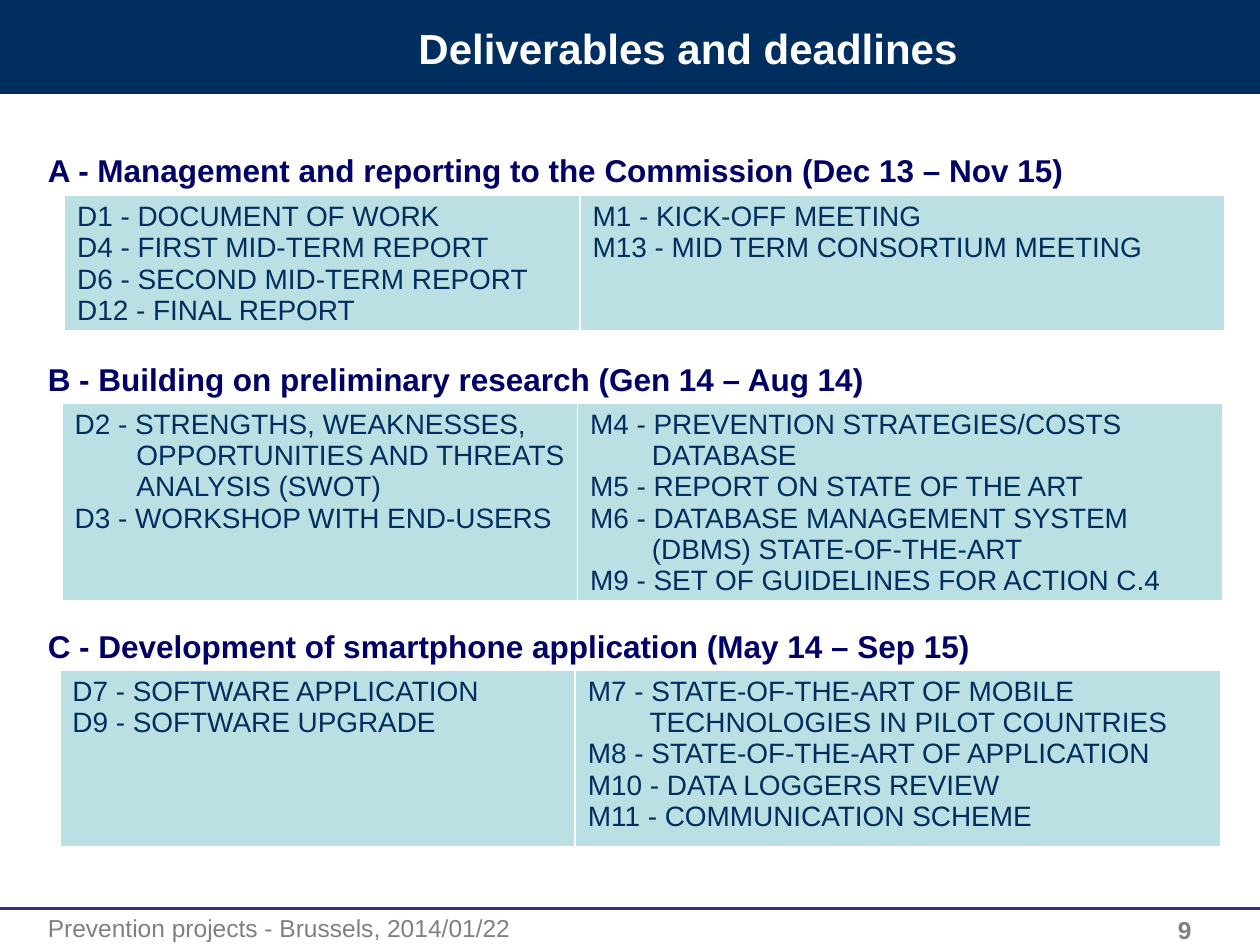
from dataclasses import dataclass

from lxml.etree import SubElement
from pptx import Presentation
from pptx.dml.color import RGBColor
from pptx.enum.shapes import MSO_CONNECTOR, MSO_SHAPE
from pptx.enum.text import MSO_ANCHOR, MSO_AUTO_SIZE, PP_ALIGN
from pptx.oxml.ns import qn
from pptx.util import Pt


@dataclass(frozen=True)
class Theme:
    font: str = "Arial"
    navy: str = "002F5F"
    head: str = "000066"
    rule: str = "2F2F98"
    grey: str = "808080"
    cell: str = "BBE0E3"
    white: str = "FFFFFF"
    title_size: int = 24
    head_size: int = 18
    cell_size: int = 16
    foot_size: int = 14


THEME = Theme()
HEAD_LEFT, HEAD_WIDTH = 20.2, 680.4
COLS = (294.5, 368.6)
HANG = 35.3

# heading, heading top, table (left, top, height), then (lines, hang) per column
PARTS = [
    ("A - Management and reporting to the Commission (Dec 13 – Nov 15)",
     82.8, (36.9, 111.6, 77),
     [(["D1 - DOCUMENT OF WORK", "D4 - FIRST MID-TERM REPORT",
        "D6 - SECOND MID-TERM REPORT", "D12 - FINAL REPORT"], 0),
      (["M1 - KICK-OFF MEETING", "M13 - MID TERM CONSORTIUM MEETING"], 0)]),
    ("B - Building on preliminary research (Gen 14 – Aug 14)",
     202.3, (35.5, 230.4, 112),
     [(["D2 - STRENGTHS, WEAKNESSES, OPPORTUNITIES AND THREATS ANALYSIS (SWOT)",
        "D3 - WORKSHOP WITH END-USERS"], HANG),
      (["M4 - PREVENTION STRATEGIES/COSTS DATABASE",
        "M5 - REPORT ON STATE OF THE ART",
        "M6 - DATABASE MANAGEMENT SYSTEM (DBMS) STATE-OF-THE-ART",
        "M9 - SET OF GUIDELINES FOR ACTION C.4"], HANG)]),
    ("C - Development of smartphone application (May 14 – Sep 15)",
     355, (34.2, 383, 101.5),
     [(["D7 - SOFTWARE APPLICATION", "D9 - SOFTWARE UPGRADE"], 0),
      (["M7 - STATE-OF-THE-ART OF MOBILE TECHNOLOGIES IN PILOT COUNTRIES",
        "M8 - STATE-OF-THE-ART OF APPLICATION", "M10 - DATA LOGGERS REVIEW",
        "M11 - COMMUNICATION SCHEME"], HANG)]),
]


def rgb(code):
    return RGBColor.from_string(code)


def apply(target, values):
    for name, value in values.items():
        setattr(target, name, value)


def place(shape, left, top, width, height):
    apply(shape, {"left": Pt(left), "top": Pt(top),
                  "width": Pt(width), "height": Pt(height)})


def write(frame, lines, size, color, bold=False, hang=0, align=PP_ALIGN.LEFT):
    """Fill a text frame with one unbulleted paragraph per line."""
    apply(frame, {"word_wrap": True, "text": "\n".join(lines)})
    for para in frame.paragraphs:
        props = para._p.get_or_add_pPr()
        props.set("marL", str(Pt(hang)))
        props.set("indent", str(-Pt(hang)))
        SubElement(props, qn("a:buNone"))
        apply(para, {"alignment": align, "space_before": Pt(0)})
        apply(para.font, {"name": THEME.font, "size": Pt(size), "bold": bold})
        para.font.color.rgb = rgb(color)


def add_text(slide, box, text, **style):
    shape = slide.shapes.add_textbox(*map(Pt, box))
    write(shape.text_frame, [text], **style)


def add_band(slide):
    """Draw the title band behind all other shapes."""
    band = slide.shapes.add_shape(MSO_SHAPE.RECTANGLE, 0, 0, Pt(720), Pt(53.6))
    band.shadow.inherit = False
    band.fill.solid()
    band.fill.fore_color.rgb = rgb(THEME.navy)
    band.line.fill.background()
    slide.shapes._spTree.insert(2, band._element)


def add_rule(slide, top):
    rule = slide.shapes.add_connector(
        MSO_CONNECTOR.STRAIGHT, 0, Pt(top), Pt(720), Pt(top))
    rule.line.width = Pt(2)
    rule.line.color.rgb = rgb(THEME.rule)
    SubElement(rule._element.spPr, qn("a:effectLst"))


def set_title(slide, text):
    title = slide.shapes.title
    place(title, 124.6, 2.2, 537.1, 50.4)
    write(title.text_frame, [text], THEME.title_size, THEME.white, True,
          align=PP_ALIGN.CENTER)
    apply(title.text_frame, {"vertical_anchor": MSO_ANCHOR.MIDDLE,
                             "auto_size": MSO_AUTO_SIZE.NONE})


def add_head(slide, text, top, holder=None):
    """Write a heading in the given placeholder, or else in a new text box."""
    shape = holder or slide.shapes.add_textbox(0, 0, 0, 0)
    place(shape, HEAD_LEFT, top, HEAD_WIDTH, 28)
    write(shape.text_frame, [text], THEME.head_size, THEME.head, True, 27)
    apply(shape.text_frame, {"vertical_anchor": MSO_ANCHOR.TOP,
                             "auto_size": MSO_AUTO_SIZE.NONE})


def add_edges(cell):
    props = cell._tc.get_or_add_tcPr()
    for side, width in {"L": 1, "R": 1, "T": 1, "B": 3}.items():
        edge = SubElement(props, qn(f"a:ln{side}"), w=str(Pt(width)))
        fill = SubElement(edge, qn("a:solidFill"))
        SubElement(fill, qn("a:srgbClr"), val=THEME.white)


def add_grid(slide, left, top, height, cells):
    frame = slide.shapes.add_table(
        1, len(COLS), Pt(left), Pt(top), Pt(sum(COLS)), Pt(height))
    grid = frame.table
    apply(grid, {"first_row": False, "horz_banding": False})
    for index, (lines, hang) in enumerate(cells):
        grid.columns[index].width = Pt(COLS[index])
        cell = grid.cell(0, index)
        add_edges(cell)
        cell.fill.solid()
        cell.fill.fore_color.rgb = rgb(THEME.cell)
        write(cell.text_frame, lines, THEME.cell_size, THEME.navy, hang=hang)


def main():
    deck = Presentation()
    apply(deck, {"slide_width": Pt(720), "slide_height": Pt(540)})
    slide = deck.slides.add_slide(deck.slide_layouts[1])
    add_band(slide)
    set_title(slide, "Deliverables and deadlines")

    holder = slide.placeholders[1]
    for head, head_top, box, cells in PARTS:
        add_head(slide, head, head_top, holder)
        add_grid(slide, *box, cells)
        holder = None

    add_rule(slide, 519.1)
    foot = {"size": THEME.foot_size, "color": THEME.grey}
    add_text(slide, (HEAD_LEFT, 518.4, 641.5, 20.9),
             "Prevention projects - Brussels, 2014/01/22", **foot)
    add_text(slide, (666, 519.1, 54, 20.9), "9", bold=True, **foot)
    deck.save("out.pptx")


if __name__ == "__main__":
    main()
